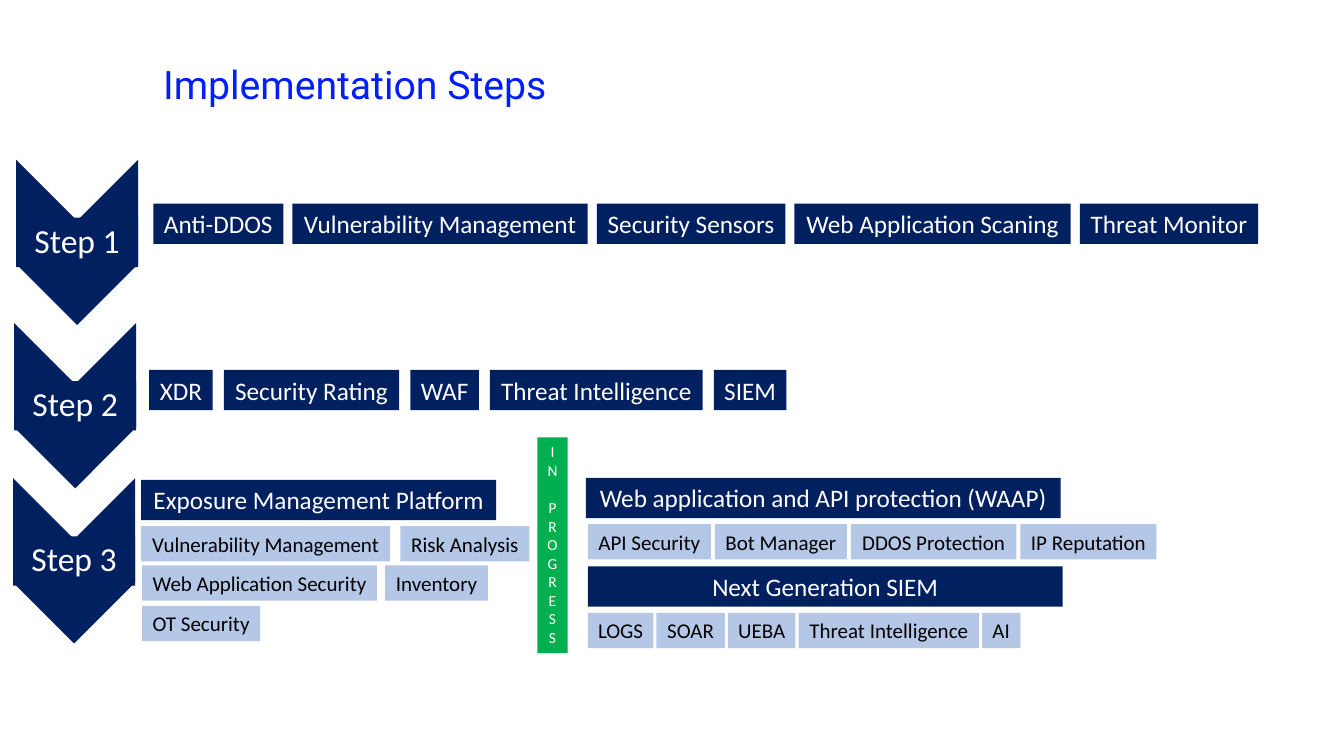
from pptx import Presentation
from pptx.dml.color import RGBColor
from pptx.enum.shapes import MSO_SHAPE
from pptx.enum.text import MSO_ANCHOR, MSO_AUTO_SIZE, PP_ALIGN
from pptx.util import Inches, Pt

COLORS = {
    "title": "001EFF",
    "navy": "002060",
    "sky": "B4C7E7",
    "green": "00B050",
    "white": "FFFFFF",
    "black": "000000",
}
TITLE = "Implementation Steps"
STEPS = [("Step 1", 0.16, 2.16), ("Step 2", 0.14, 3.78), ("Step 3", 0.13, 5.32)]
STEP_WIDTH, STEP_HEIGHT, CHEVRON_LENGTH = 1.21, 0.49, 1.64

STYLES = {
    "solution": {"height": 0.4, "size": 18, "fill": "navy", "ink": "white"},
    "module": {"height": 0.35, "size": 15, "fill": "sky", "ink": "black"},
    "status": {"height": 2.14, "size": 11, "fill": "green", "ink": "white"},
}
ROWS = [
    ("solution", 1.52, 2.02, 0.09, [
        ("Anti-DDOS", 1.29), ("Vulnerability Management", 2.93),
        ("Security Sensors", 1.87), ("Web Application Scaning", 2.74),
        ("Threat Monitor", 1.77)]),
    ("solution", 1.48, 3.67, 0.11, [
        ("XDR", 0.63), ("Security Rating", 1.74), ("WAF", 0.68),
        ("Threat Intelligence", 2.11), ("SIEM", 0.72)]),
    ("solution", 1.4, 4.76, 0, [("Exposure Management Platform", 3.52)]),
    ("module", 1.4, 5.22, 0.1, [
        ("Vulnerability Management", 2.47), ("Risk Analysis", 1.28)]),
    ("module", 1.41, 5.61, 0.08, [
        ("Web Application Security", 2.33), ("Inventory", 1.02)]),
    ("module", 1.41, 6.01, 0, [("OT Security", 1.17)]),
    ("solution", 5.81, 4.74, 0, [("Web application and API protection (WAAP)", 4.71)]),
    ("module", 5.83, 5.2, 0.04, [
        ("API Security", 1.22), ("Bot Manager", 1.31),
        ("DDOS Protection", 1.64), ("IP Reputation", 1.35)]),
    ("solution", 5.83, 5.62, 0, [("Next Generation SIEM", 4.71)]),
    ("module", 5.83, 6.08, 0.03, [
        ("LOGS", 0.65), ("SOAR", 0.68), ("UEBA", 0.67),
        ("Threat Intelligence", 1.79), ("AI", 0.38)]),
]
WRAPPED = {"Web application and API protection (WAAP)", "Next Generation SIEM"}
STATUS_WORDS = ["IN", "PROGRESS"]
STATUS_GAP = 13.4


def color(name):
    return RGBColor.from_string(COLORS[name])


def add_block(shapes, kind, left, top, width, height, fill):
    block = shapes.add_shape(kind, Inches(left), Inches(top), Inches(width), Inches(height))
    block.shadow.inherit = False
    block.fill.solid()
    block.fill.fore_color.rgb = color(fill)
    block.line.fill.background()
    return block


def write(frame, text, size, ink, font="Calibri", align=PP_ALIGN.CENTER):
    frame.text = text
    for paragraph in frame.paragraphs:
        paragraph.alignment = align
        paragraph.font.size = Pt(size)
        for run in paragraph.runs:
            run.font.name = font
            run.font.size = Pt(size)
            run.font.color.rgb = color(ink)


def add_label(shapes, text, style_name, left, top, width):
    style = STYLES[style_name]
    label = add_block(shapes, MSO_SHAPE.RECTANGLE, left, top, width, style["height"], style["fill"])
    frame = label.text_frame
    write(frame, text, style["size"], style["ink"])
    frame.vertical_anchor = MSO_ANCHOR.TOP
    frame.word_wrap = text in WRAPPED
    frame.auto_size = MSO_AUTO_SIZE.SHAPE_TO_FIT_TEXT
    return frame


def add_step(shapes, text, left, top):
    step = shapes.add_group_shape().shapes
    chevron_left = left + (STEP_WIDTH - CHEVRON_LENGTH) / 2
    chevron_top = top + (STEP_HEIGHT - STEP_WIDTH) / 2
    chevron = add_block(step, MSO_SHAPE.CHEVRON, chevron_left, chevron_top,
                        CHEVRON_LENGTH, STEP_WIDTH, "navy")
    chevron.rotation = 90
    name = add_block(step, MSO_SHAPE.RECTANGLE, left, top, STEP_WIDTH, STEP_HEIGHT, "navy")
    frame = name.text_frame
    frame.margin_left = frame.margin_right = Inches(0.03)
    frame.margin_top = frame.margin_bottom = Inches(0.03)
    frame.vertical_anchor = MSO_ANCHOR.MIDDLE
    write(frame, text, 24, "white")
    frame.paragraphs[0].line_spacing = 0.9


def main():
    deck = Presentation()
    deck.slide_width, deck.slide_height = Inches(13.33), Inches(7.5)
    slide = deck.slides.add_slide(deck.slide_layouts[6])
    shapes = slide.shapes

    heading = shapes.add_textbox(Inches(1.52), Inches(0.6), Inches(10.9), Inches(0.52)).text_frame
    heading.word_wrap = True
    heading.vertical_anchor = MSO_ANCHOR.BOTTOM
    write(heading, TITLE, 28, "title", "Roboto", PP_ALIGN.LEFT)
    heading.paragraphs[0].line_spacing = 0.9

    for text, left, top in STEPS:
        add_step(shapes, text, left, top)

    for style_name, left, top, gap, labels in ROWS:
        for text, width in labels:
            add_label(shapes, text, style_name, left, top, width)
            left += width + gap

    status = add_label(shapes, "\n".join("".join(STATUS_WORDS)), "status", 5.33, 4.34, 0.3)
    status.paragraphs[len(STATUS_WORDS[0])].space_before = Pt(STATUS_GAP)

    deck.save("out.pptx")


if __name__ == "__main__":
    main()
